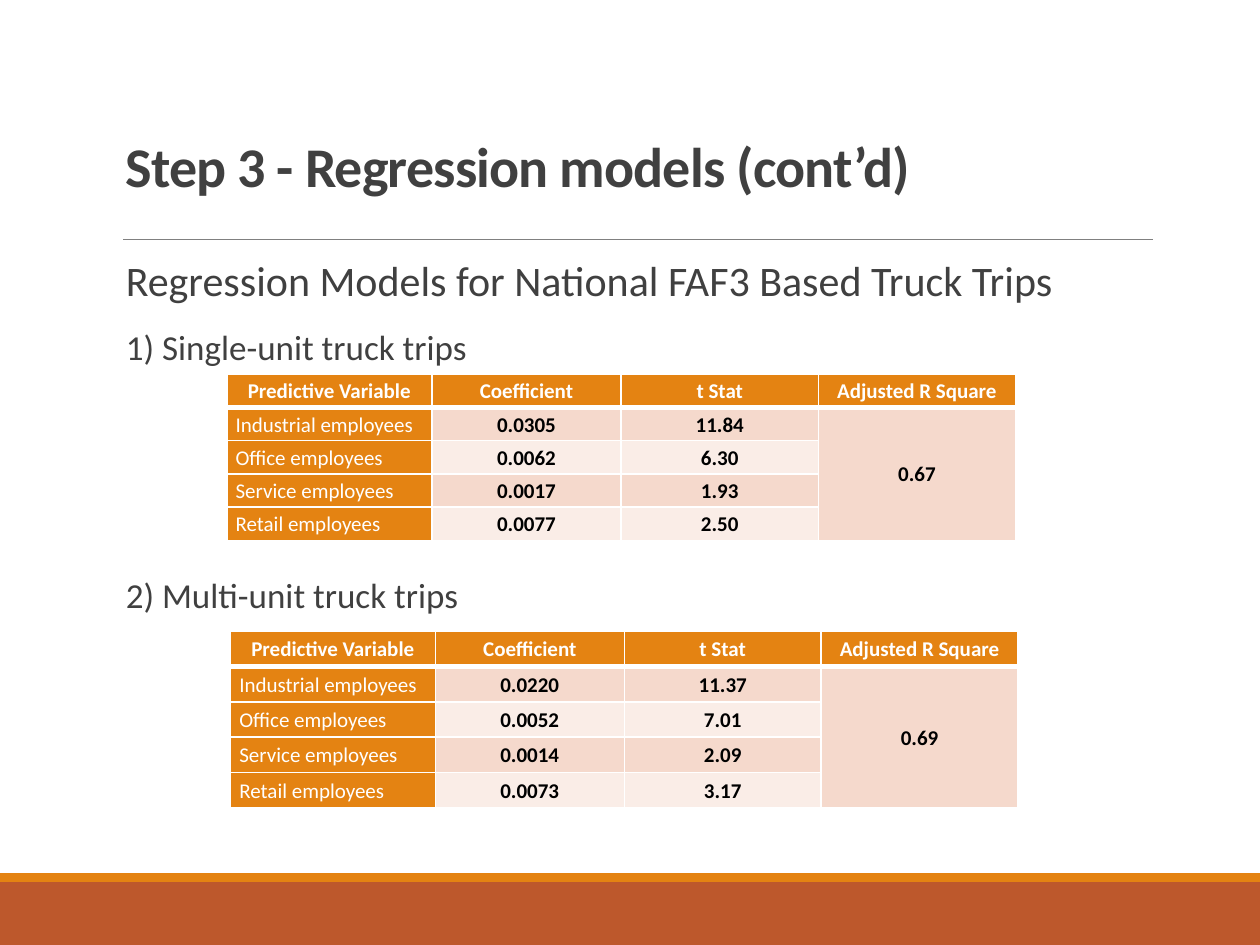
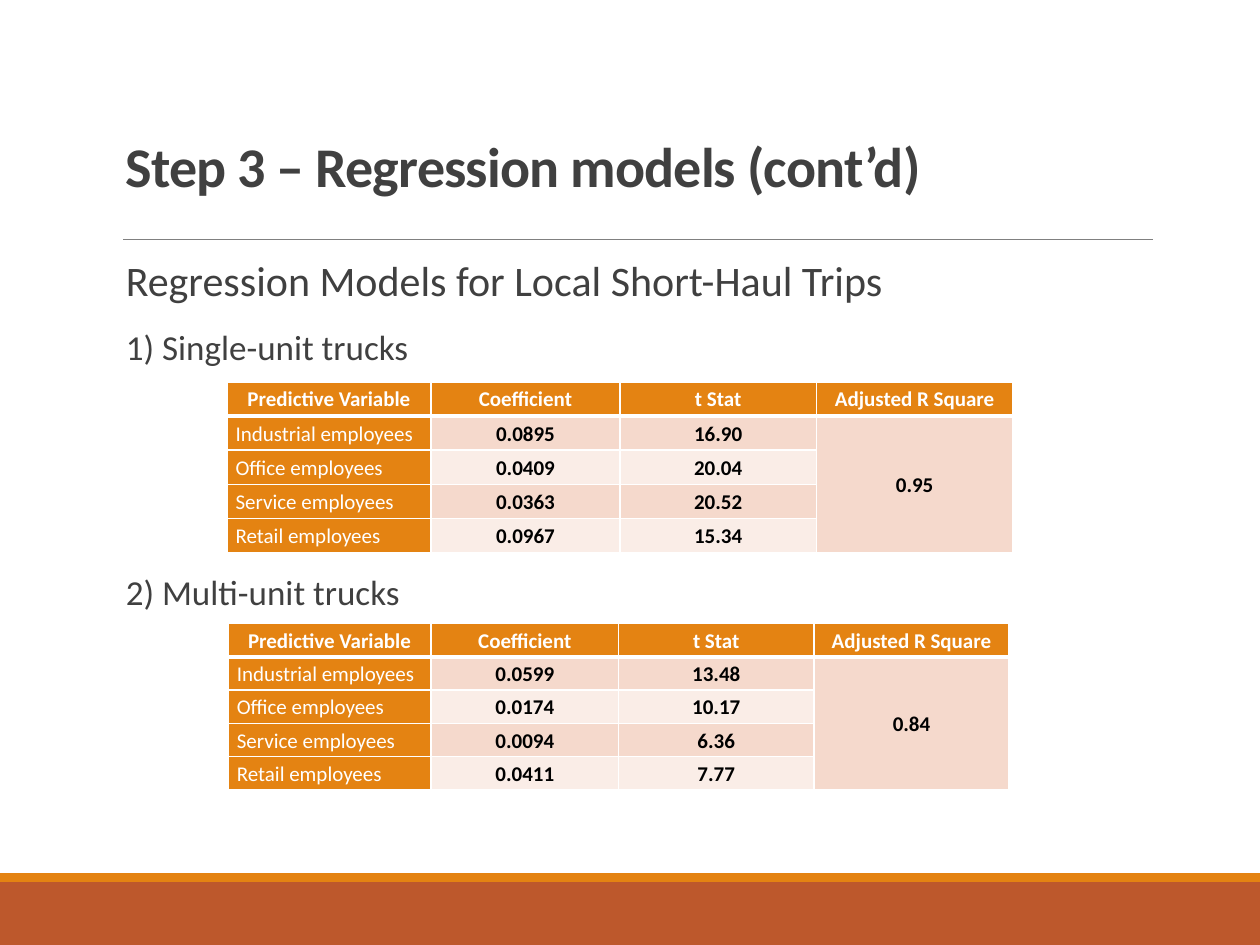
from dataclasses import dataclass

from lxml import etree
from pptx import Presentation
from pptx.dml.color import RGBColor
from pptx.enum.shapes import MSO_CONNECTOR, MSO_SHAPE
from pptx.enum.text import MSO_ANCHOR, PP_ALIGN
from pptx.oxml.ns import qn
from pptx.util import Inches, Pt

RECT = MSO_SHAPE.RECTANGLE
LINE = MSO_CONNECTOR.STRAIGHT
TOP, MIDDLE, BOTTOM = MSO_ANCHOR.TOP, MSO_ANCHOR.MIDDLE, MSO_ANCHOR.BOTTOM
LEFT, CENTER = PP_ALIGN.LEFT, PP_ALIGN.CENTER


@dataclass(frozen=True)
class Theme:
    font: str = "Calibri"
    ink: str = "404040"
    rule: str = "808080"
    rust: str = "BD582C"
    orange: str = "E48312"
    dark: str = "F5D9CC"
    light: str = "FAEDE7"
    white: str = "FFFFFF"
    black: str = "000000"
    title: int = 32
    head: int = 24
    item: int = 20
    cell: int = 12


THEME = Theme()

# The slide is a grid of 100 columns by 75 rows
WIDTH, HEIGHT = Inches(10), Inches(7.5)
COLS, ROWS = 100, 75
MARGIN, SPAN = 9, 82.5

HEADS = ("Predictive Variable", "Coefficient", "t Stat", "Adjusted R Square")
NAMES = ("Industrial employees", "Office employees",
         "Service employees", "Retail employees")
SHARES = (0.26, 0.24, 0.25, 0.25)

# Each table: place on the grid, (coefficient, t stat) rows, adjusted R square
SLIDES = (
    dict(title="Step 3 - Regression models (cont’d)",
         head="Regression Models for National FAF3 Based Truck Trips",
         items=("1) Single-unit truck trips", "2) Multi-unit truck trips"),
         gap=118,
         tables=(
             ((18, 29.7, 62.6, 13.2),
              (("0.0305", "11.84"), ("0.0062", "6.30"),
               ("0.0017", "1.93"), ("0.0077", "2.50")), "0.67"),
             ((18.3, 50.1, 62.5, 14),
              (("0.0220", "11.37"), ("0.0052", "7.01"),
               ("0.0014", "2.09"), ("0.0073", "3.17")), "0.69"))),
    dict(title="Step 3 – Regression models (cont’d)",
         head="Regression Models for Local Short-Haul Trips",
         items=("1) Single-unit trucks", "2) Multi-unit trucks"),
         gap=116,
         tables=(
             ((18, 30.3, 62.4, 13.6),
              (("0.0895", "16.90"), ("0.0409", "20.04"),
               ("0.0363", "20.52"), ("0.0967", "15.34")), "0.95"),
             ((18.1, 49.5, 62, 13.2),
              (("0.0599", "13.48"), ("0.0174", "10.17"),
               ("0.0094", "6.36"), ("0.0411", "7.77")), "0.84"))),
)


def grid(x, y, w, h):
    return (int(WIDTH * x / COLS), int(HEIGHT * y / ROWS),
            int(WIDTH * w / COLS), int(HEIGHT * h / ROWS))


def color(code):
    return RGBColor.from_string(code)


def style(para, size, code, bold=False, lead=0.9, align=LEFT):
    font = para.font
    font.name, font.size, font.bold = THEME.font, Pt(size), bold
    font.color.rgb = color(code)
    para.line_spacing, para.alignment = lead, align


def band(slide, y, h, code):
    shape = slide.shapes.add_shape(RECT, *grid(0, y, COLS, h))
    shape.shadow.inherit = False
    shape.fill.solid()
    shape.fill.fore_color.rgb = color(code)
    shape.line.fill.background()


def rule(slide, x, y, w):
    left, top, wide, _ = grid(x, y, w, 0)
    line = slide.shapes.add_connector(LINE, left, top, left + wide, top)
    line.line.color.rgb = color(THEME.rule)
    line.line.width = Pt(0.5)
    props = line._element.spPr
    etree.SubElement(props, qn("a:effectLst"))


def text(slide, place, anchor):
    frame = slide.shapes.add_textbox(*grid(*place)).text_frame
    frame.word_wrap = True
    frame.vertical_anchor = anchor
    return frame


def title(slide, words):
    para = text(slide, (MARGIN, 3.1, SPAN, 13.2), BOTTOM).paragraphs[0]
    para.text = words
    style(para, THEME.title, THEME.ink, True, 0.85)
    para.font._element.set("spc", "-50")


def body(slide, head, items, gap):
    frame = text(slide, (MARGIN, 20.2, SPAN, 44), TOP)
    sizes = (THEME.head, THEME.item, THEME.item)
    for i, (words, size, space) in enumerate(
            zip((head, *items), sizes, (12, 12, gap))):
        para = frame.add_paragraph() if i else frame.paragraphs[0]
        para.text = words
        style(para, size, THEME.ink)
        para.space_before, para.space_after = Pt(space), Pt(2)


def edge(cell, side, width):
    line = etree.SubElement(cell._tc.get_or_add_tcPr(), qn("a:ln" + side),
                            w=str(Pt(width)))
    fill = etree.SubElement(line, qn("a:solidFill"))
    etree.SubElement(fill, qn("a:srgbClr"), val=THEME.white)


def paint(cell, row, col):
    # Borders come before the fill; a heavy rule parts header and data
    heavy = {(0, "B"), (1, "T")}
    for side in "LRTB":
        edge(cell, side, 3 if (row, side) in heavy else 1)
    main = row == 0 or col == 0
    code = THEME.orange if main else THEME.dark if row % 2 else THEME.light
    cell.fill.solid()
    cell.fill.fore_color.rgb = color(code)
    cell.vertical_anchor = MIDDLE
    cell.margin_left = cell.margin_right = Inches(0.07)
    cell.margin_top = cell.margin_bottom = 0
    name = col == 0 and row > 0
    style(cell.text_frame.paragraphs[0], THEME.cell,
          THEME.white if main else THEME.black, not name, 1.07,
          LEFT if name else CENTER)


def table(slide, place, stats, fit):
    data = [HEADS] + [(name, *pair, "") for name, pair in zip(NAMES, stats)]
    x, y, w, h = grid(*place)
    made = slide.shapes.add_table(len(data), len(HEADS), x, y, w, h).table
    made.first_row = made.horz_banding = False
    for col, share in zip(made.columns, SHARES):
        col.width = int(w * share)
    for line in made.rows:
        line.height = h // len(data)
    for r, words in enumerate(data):
        for c, word in enumerate(words):
            cell = made.cell(r, c)
            cell.text = word
            paint(cell, r, c)
    # One R square covers all data rows
    last = len(HEADS) - 1
    made.cell(1, last).text_frame.paragraphs[0].text = fit
    made.cell(1, last).merge(made.cell(len(data) - 1, last))


def base(slide):
    band(slide, 70, 5, THEME.rust)
    band(slide, 69.3, 0.7, THEME.orange)
    rule(slide, 9.8, 19, 81.7)


def main():
    deck = Presentation()
    deck.slide_width, deck.slide_height = WIDTH, HEIGHT
    for page in SLIDES:
        slide = deck.slides.add_slide(deck.slide_layouts[6])
        base(slide)
        title(slide, page["title"])
        body(slide, page["head"], page["items"], page["gap"])
        for place, stats, fit in page["tables"]:
            table(slide, place, stats, fit)
    deck.save("out.pptx")


if __name__ == "__main__":
    main()
